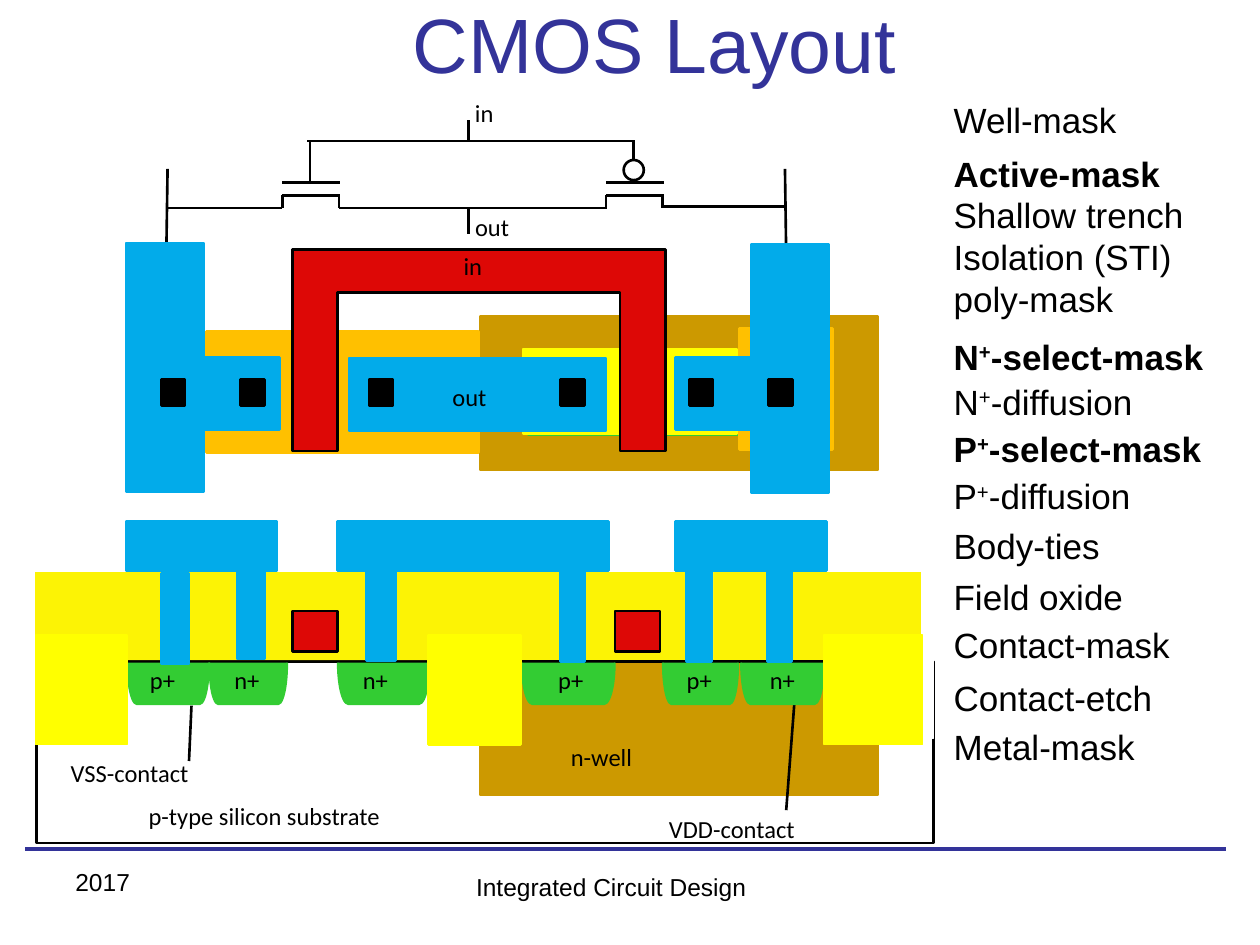
import pptx
import pptx.dml.color
import pptx.enum.shapes
import pptx.enum.text
import pptx.oxml
import pptx.util

Inches = pptx.util.Inches
Shape = pptx.enum.shapes.MSO_SHAPE

BLACK, WHITE, NAVY = "000000", "FFFFFF", "333399"
WELL, OXIDE, TRENCH = "CC9900", "FCF305", "FFFF00"
DIFFUSION, SELECT = "33CC33", "FFC000"
METAL, POLY = "02ABEA", "DD0806"
CUT_LEFTS = (1.28, 1.91, 2.93, 4.45, 5.47, 6.1)

LABEL = {"size": pptx.util.Pt(14), "name": "Calibri"}
LEGEND = {"size": pptx.util.Pt(20), "name": "Arial"}
FOOTER = {"size": pptx.util.Pt(14), "name": "Arial"}
TITLE = {"size": pptx.util.Pt(44), "name": "Arial"}
TIGHT = dict.fromkeys(
    ("margin_left", "margin_right", "margin_top", "margin_bottom"), 0)
GROWING = {"word_wrap": False,
           "auto_size": pptx.enum.text.MSO_AUTO_SIZE.SHAPE_TO_FIT_TEXT}


def rgb(color):
    return pptx.dml.color.RGBColor.from_string(color)


def apply(target, values):
    for name, value in values.items():
        setattr(target, name, value)


def paint(shape, fill, line=None, width=1.5):
    shape.shadow.inherit = False
    if fill:
        shape.fill.solid()
        shape.fill.fore_color.rgb = rgb(fill)
    else:
        shape.fill.background()
    if line:
        shape.line.color.rgb = rgb(line)
        shape.line.width = pptx.util.Pt(width)
    else:
        shape.line.fill.background()


def add_shape(page, box, fill, line=None, width=1.5, kind=Shape.RECTANGLE):
    shape = page.shapes.add_shape(kind, *map(Inches, box))
    paint(shape, fill, line, width)
    return shape


def add_shapes(page, boxes, fill, line=None, width=1.5):
    for box in boxes:
        add_shape(page, box, fill, line, width)


def add_outline(page, points, fill, line):
    corners = [(Inches(x), Inches(y)) for x, y in points]
    builder = page.shapes.build_freeform(*corners[0], scale=1.0)
    builder.add_line_segments(corners[1:], close=True)
    paint(builder.convert_to_shape(), fill, line)


def add_wires(page, wires, color=BLACK, width=1.5):
    for ends in wires:
        wire = page.shapes.add_connector(
            pptx.enum.shapes.MSO_CONNECTOR.STRAIGHT, *map(Inches, ends))
        wire.line.color.rgb = rgb(color)
        wire.line.width = pptx.util.Pt(width)
        properties = wire.line._get_or_add_ln().getparent()
        properties.append(pptx.oxml.parse_xml(
            '<a:effectLst xmlns:a="http://schemas.openxmlformats.org/'
            'drawingml/2006/main"/>'))


def write(para, text, font, color=BLACK):
    """Write text, raising a plus sign that is followed by a hyphen."""
    for piece in text.partition("+") if "+-" in text else (text,):
        span = para.add_run()
        span.text = piece
        apply(span.font, font)
        span.font.color.rgb = rgb(color)
        if piece == "+":
            span._r.get_or_add_rPr().set("baseline", "30000")


def add_text(page, box, text, font, frame, color=BLACK, align="LEFT"):
    area = page.shapes.add_textbox(*map(Inches, box)).text_frame
    apply(area, frame)
    for index, line in enumerate(text.split("\n")):
        para = area.add_paragraph() if index else area.paragraphs[0]
        para.alignment = getattr(pptx.enum.text.PP_ALIGN, align)
        write(para, line, font, color)


def add_label(page, left, top, width, text):
    add_text(page, (left, top, width, 0.23), text, LABEL, {**TIGHT, **GROWING})


def draw_frame(page):
    add_wires(page, [(0.2, 6.74, 9.73, 6.74)], NAVY, 2.25)
    middle = {"word_wrap": True,
              "vertical_anchor": pptx.enum.text.MSO_ANCHOR.MIDDLE}
    add_text(page, (0.39, -0.29, 9.61, 1.25), "CMOS Layout", TITLE, middle,
             NAVY, "CENTER")
    for box, text in (((0.5, 6.83, 2.33, 0.52), "2017"),
                      ((3.68, 6.87, 3.17, 0.52), "Integrated Circuit Design")):
        add_text(page, box, text, FOOTER, {"word_wrap": True})


def draw_schematic(page):
    add_wires(page, [
        (1.32, 2.03, 1.33, 1.34), (6.24, 2.03, 6.23, 1.34),
        (2.69, 1.65, 4.82, 1.65), (5.03, 1.43, 5.03, 1.12),
        (2.44, 1.12, 5.04, 1.12), (2.46, 1.44, 2.46, 1.12),
        (3.72, 1.11, 3.72, 0.95), (3.72, 1.65, 3.72, 1.86),
        (5.25, 1.64, 6.24, 1.64), (2.24, 1.65, 1.32, 1.65)])
    for left, right in ((2.24, 2.7), (4.81, 5.27)):
        add_wires(page, [
            (left, 1.45, right, 1.45), (left, 1.55, right, 1.55),
            (left, 1.55, left, 1.65), (right - 0.01, 1.55, right - 0.01, 1.65)])
    add_shape(page, (4.95, 1.27, 0.16, 0.16), WHITE, BLACK, kind=Shape.OVAL)
    add_label(page, 3.77, 0.78, 0.17, "in")
    add_label(page, 3.77, 1.68, 0.32, "out")


def add_rail(page, outer, top, inward):
    """Draw a supply rail whose contact arm points inward (1 right, -1 left)."""
    inner, tip = outer + 0.62 * inward, outer + 1.22 * inward
    bottom = top + 1.97
    add_outline(page, [
        (outer, top), (outer, bottom), (inner, bottom), (inner, 3.41),
        (tip, 3.41), (tip, 2.84), (inner, 2.84), (inner, top)], METAL, METAL)


def draw_top_view(page):
    add_shape(page, (3.81, 2.51, 3.16, 1.22), WELL, WELL)
    add_shapes(page, [(left, 2.78, 2.39, 0.67) for left in (1.07, 4.19)],
               DIFFUSION, DIFFUSION)
    add_shapes(page, [(1.04, 2.77, 0.59, 0.67), (4.15, 2.77, 1.7, 0.67)],
               TRENCH, TRENCH)
    add_shapes(page, [(5.87, 2.61, 0.74, 0.96), (1.64, 2.63, 2.16, 0.96)],
               SELECT, SELECT)
    add_outline(page, [
        (2.32, 3.58), (2.32, 1.98), (5.28, 1.98), (5.28, 3.58),
        (4.92, 3.58), (4.92, 2.32), (2.68, 2.32), (2.68, 3.58)], POLY, BLACK)
    add_label(page, 3.68, 1.99, 0.17, "in")
    add_rail(page, 1, 1.93, 1)
    add_shape(page, (2.77, 2.84, 2.04, 0.58), METAL, METAL)
    add_rail(page, 6.58, 1.94, -1)
    add_shapes(page, [(left, 3.01, 0.19, 0.21) for left in CUT_LEFTS],
               BLACK, BLACK)
    add_label(page, 3.59, 3.03, 0.32, "out")


def add_diffusion(page, left, width, label_left, label):
    depth, middle = 0.33, left + width / 2
    box = (middle - depth / 2, 5.425 - width / 2, depth, width)
    region = add_shape(page, box, DIFFUSION, DIFFUSION, 1, Shape.RIGHT_BRACKET)
    region.rotation = 90
    region.adjustments[0] = 0.35 * width
    add_label(page, label_left, 5.28, 0.22, label)


def draw_substrate(page):
    add_shape(page, (0.28, 4.54, 7.03, 0.69), OXIDE)
    add_shapes(page, [(4.12, 5.04, 2.44, 0.2), (1.01, 5.04, 2.41, 0.2)], OXIDE)
    add_shape(page, (3.81, 5.25, 3.16, 1.06), WELL, WELL)
    name = add_shape(page, (4.53, 5.89, 0.51, 0.23), WELL, WELL, 0.75)
    apply(name.text_frame, {**TIGHT, **GROWING,
                            "vertical_anchor": pptx.enum.text.MSO_ANCHOR.TOP})
    name.text_frame.paragraphs[0].alignment = pptx.enum.text.PP_ALIGN.LEFT
    write(name.text_frame.paragraphs[0], "n-well", LABEL)
    add_label(page, 5.31, 6.46, 1.1, "VDD-contact")
    add_label(page, 1.18, 6.36, 2.03, "p-type silicon substrate")
    add_label(page, 0.56, 6.02, 1.08, "VSS-contact")
    add_shape(page, (0.29, 5.25, 7.12, 1.44), None, BLACK)
    add_wires(page, [(6.24, 6.43, 6.32, 5.38), (1.5, 6.04, 1.52, 5.6)])
    for region in ((1.01, 0.65, 1.19, "p+"), (4.14, 0.74, 4.43, "p+"),
                   (5.26, 0.6, 5.45, "p+"), (1.66, 0.62, 1.86, "n+"),
                   (2.68, 0.73, 2.88, "n+"), (5.88, 0.66, 6.11, "n+")):
        add_diffusion(page, *region)


def draw_layers(page):
    """Draw contacts, metal, trenches and gates above the substrate."""
    add_shapes(page, [(left, 4.54, 0.19, 0.69) for left in CUT_LEFTS], WHITE)
    add_shapes(page, [(2.68, 4.14, 2.15, 0.39), (1, 4.14, 1.2, 0.39),
                      (5.36, 4.14, 1.2, 0.39)], METAL, METAL)
    add_shapes(page, [(0.29, 4.85, 3.51, 0.39), (6.97, 4.85, 0.34, 0.39)],
               OXIDE)
    add_shapes(page, [(0.19, 5.24, 0.81, 0.62), (6.55, 5.23, 0.86, 0.63)],
               WHITE, WHITE, 0.75)
    add_shapes(page, [(0.28, 5.04, 0.73, 0.87), (6.54, 5.04, 0.78, 0.87)],
               TRENCH, TRENCH, 0.75)
    add_shape(page, (3.4, 5.04, 0.73, 0.87), TRENCH, TRENCH)
    plugs = ((1.28, 4.55, 0.22), (1.88, 4.51, 0.22), (2.91, 4.52, 0.23),
             (4.45, 4.53, 0.19), (5.45, 4.53, 0.2), (6.09, 4.53, 0.19))
    add_shapes(page, [(*plug, 0.72) for plug in plugs], METAL, METAL)
    add_shapes(page, [(left, 4.85, 0.36, 0.32) for left in (2.32, 4.88)],
               POLY, BLACK)


def draw_legend(page):
    for top, width, text in (
            (0.73, 1.57, "Well-mask"), (1.16, 1.86, "Active-mask"),
            (1.49, 2.18, "Shallow trench\nIsolation (STI)"),
            (2.15, 1.57, "poly-mask"), (2.61, 2.21, "N+-select-mask"),
            (2.97, 1.77, "N+-diffusion"), (3.34, 2.19, "P+-select-mask"),
            (3.72, 1.76, "P+-diffusion"), (4.11, 1.75, "Body-ties"),
            (4.52, 1.65, "Field oxide"), (4.9, 2.04, "Contact-mask"),
            (5.32, 1.9, "Contact-etch"), (5.71, 1.71, "Metal-mask")):
        bold = text.startswith("Active") or "select" in text
        height = 0.77 if "\n" in text else 0.43
        add_text(page, (7.47, top, width, height), text,
                 {**LEGEND, "bold": bold}, GROWING)


def main():
    deck = pptx.Presentation()
    apply(deck, {"slide_width": Inches(10), "slide_height": Inches(7.5)})
    page = deck.slides.add_slide(deck.slide_layouts[6])
    for draw in (draw_frame, draw_substrate, draw_layers, draw_schematic,
                 draw_top_view, draw_legend):
        draw(page)
    deck.save("out.pptx")


if __name__ == "__main__":
    main()
